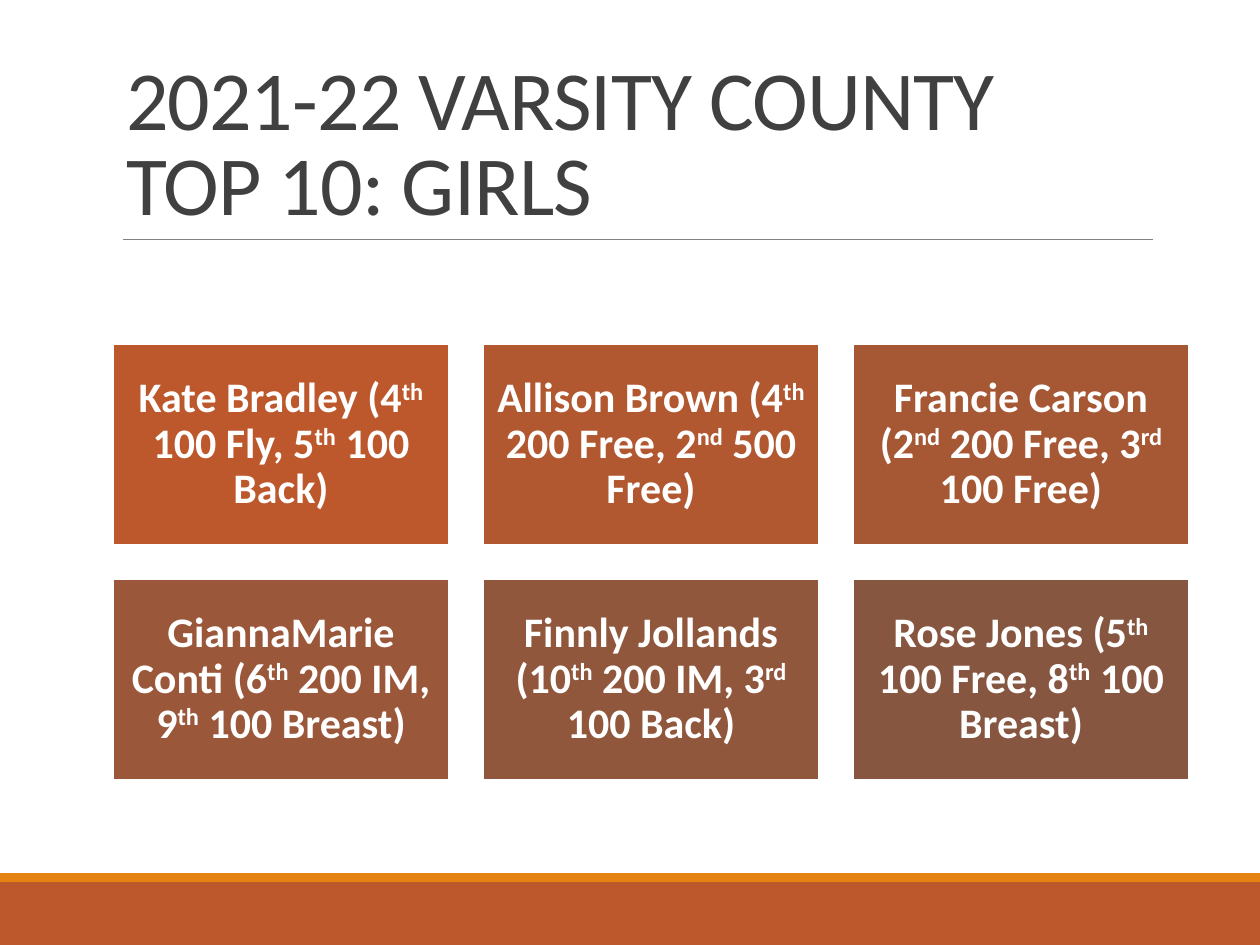
"""Build the slide listing the girls' varsity county top 10 swimmers."""
from pptx import Presentation
from pptx.dml.color import RGBColor
from pptx.enum.shapes import MSO_CONNECTOR as Connector, MSO_SHAPE as Shape
from pptx.enum.text import MSO_ANCHOR as Anchor, MSO_AUTO_SIZE as AutoSize, PP_ALIGN as Align
from pptx.oxml.ns import qn
from pptx.util import Pt

PX = 914400 / 126
WHITE = "FFFFFF"


def color(value):
    return RGBColor.from_string(value)


def write(shape, text, size, fill, bold=False, align=Align.LEFT,
          anchor=Anchor.MIDDLE, line_spacing=0.9, tracking=0, inset=13):
    frame = shape.text_frame
    frame.word_wrap = True
    frame.auto_size = AutoSize.NONE
    frame.vertical_anchor = anchor
    frame.margin_left = frame.margin_right = round(13 * PX)
    frame.margin_top = frame.margin_bottom = round(inset * PX)
    paragraph = frame.paragraphs[0]
    paragraph.alignment = align
    paragraph.line_spacing = line_spacing
    for row, line in enumerate(text.split("\n")):
        if row:
            paragraph.add_line_break()
        for index, part in enumerate(line.split("^")):
            run = paragraph.add_run()
            run.text = part
            run.font.name = "Calibri"
            run.font.size = Pt(size)
            run.font.bold = bold
            run.font.color.rgb = color(fill)
            properties = run._r.get_or_add_rPr()
            if tracking:
                properties.set("spc", str(tracking))
            if index % 2:
                properties.set("baseline", "30000")


presentation = Presentation()
presentation.slide_width = round(1260 * PX)
presentation.slide_height = round(945 * PX)
slide = presentation.slides.add_slide(presentation.slide_layouts[5])

for top, height, fill in [(882, 63, "BD582C"), (873, 9, "E48312")]:
    band = slide.shapes.add_shape(Shape.RECTANGLE, 0, round(top * PX),
                                  round(1260 * PX), round(height * PX))
    band.shadow.inherit = False
    band.fill.solid()
    band.fill.fore_color.rgb = color(fill)
    band.line.fill.background()

rule = slide.shapes.add_connector(Connector.STRAIGHT, round(123 * PX), round(239 * PX),
                                  round(1153 * PX), round(239 * PX))
rule.line.color.rgb = color("808080")
rule.line.width = Pt(0.5)
rule._element.spPr.append(rule._element.makeelement(qn("a:effectLst"), {}))

title = slide.shapes.title
title.left, title.top = round(113 * PX), round(39 * PX)
title.width, title.height = round(1040 * PX), round(200 * PX)
write(title, "2021-22 VARSITY COUNTY\nTOP 10: GIRLS", 48, "404040",
      anchor=Anchor.BOTTOM, line_spacing=0.85, tracking=-50, inset=6)

swimmers = [
    ("Kate Bradley (4^th^ 100 Fly, 5^th^ 100 Back)", "BD582C"),
    ("Allison Brown (4^th^ 200 Free, 2^nd^ 500 Free)", "B15831"),
    ("Francie Carson (2^nd^ 200 Free, 3^rd^ 100 Free)", "A65835"),
    ("GiannaMarie Conti (6^th^ 200 IM, 9^th^ 100 Breast)", "9B5739"),
    ("Finnly Jollands (10^th^ 200 IM, 3^rd^ 100 Back)", "90573D"),
    ("Rose Jones (5^th^ 100 Free, 8^th^ 100 Breast)", "865640"),
]
for index, (text, fill) in enumerate(swimmers):
    row, column = divmod(index, 3)
    card = slide.shapes.add_shape(Shape.RECTANGLE, round((113 + 370 * column) * PX),
                                  round((344 + 235 * row) * PX),
                                  round(336 * PX), round(201 * PX))
    card.shadow.inherit = False
    card.fill.solid()
    card.fill.fore_color.rgb = color(fill)
    card.line.color.rgb = color(WHITE)
    card.line.width = Pt(1.25)
    write(card, text, 24, WHITE, bold=True, align=Align.CENTER)

presentation.save("out.pptx")
